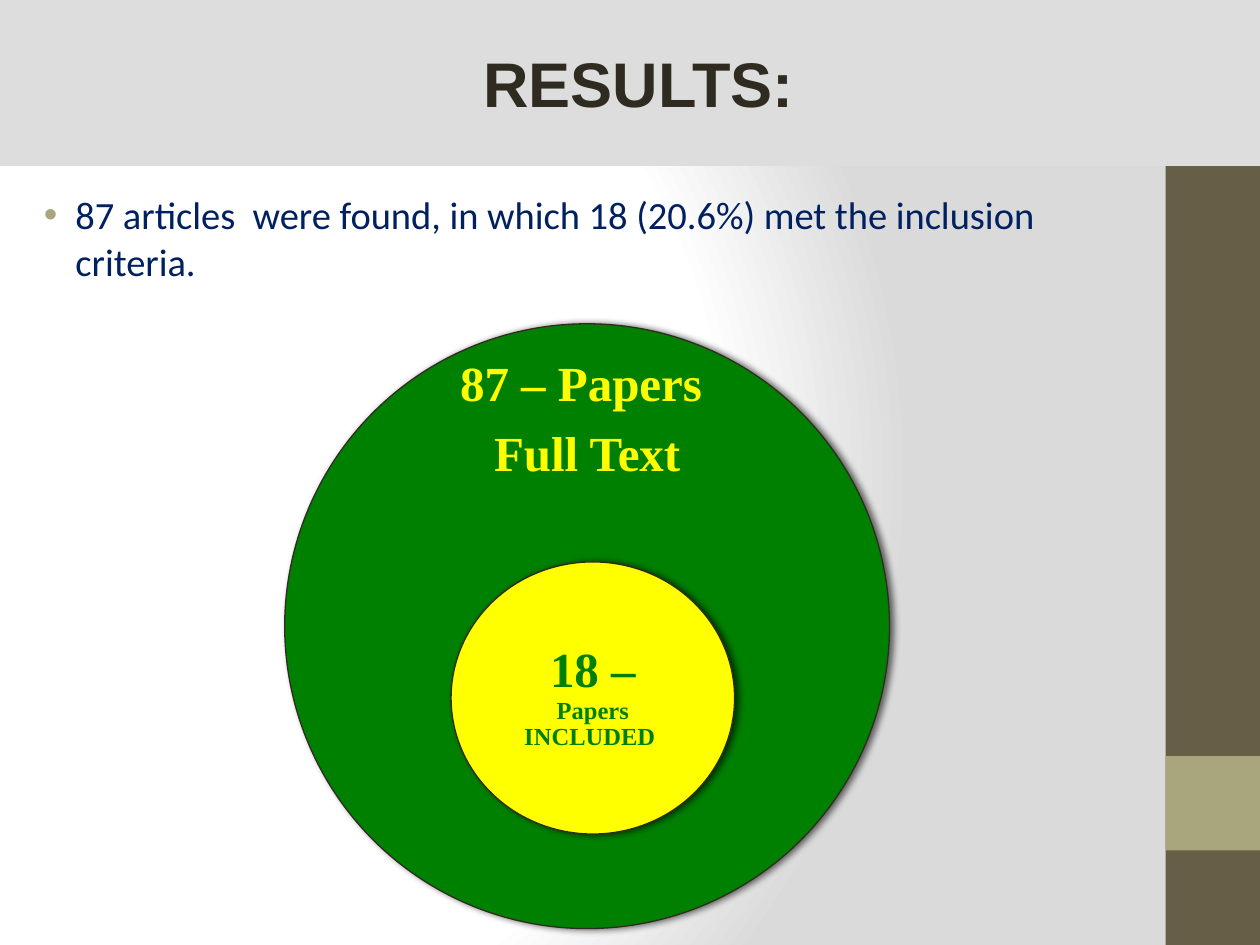
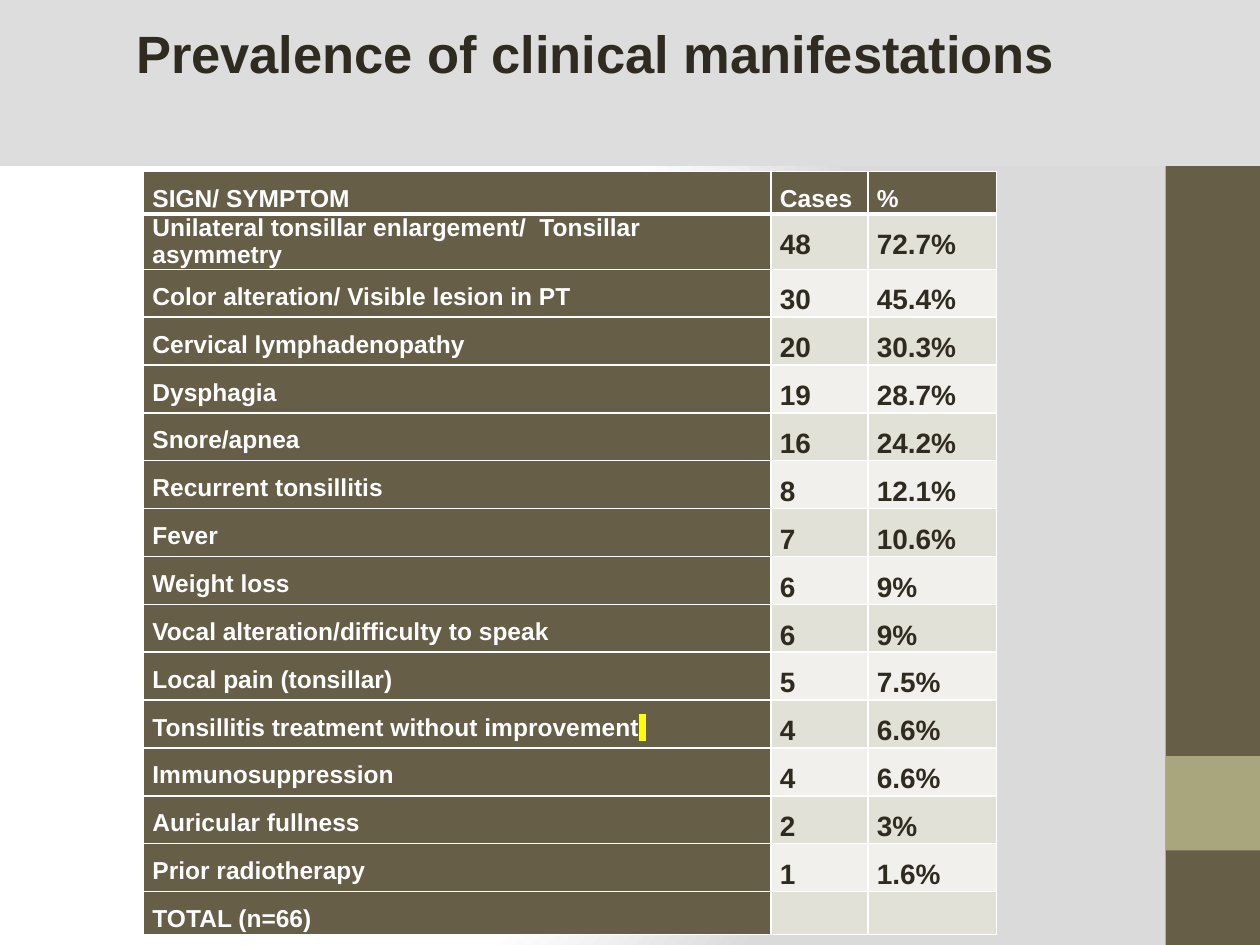
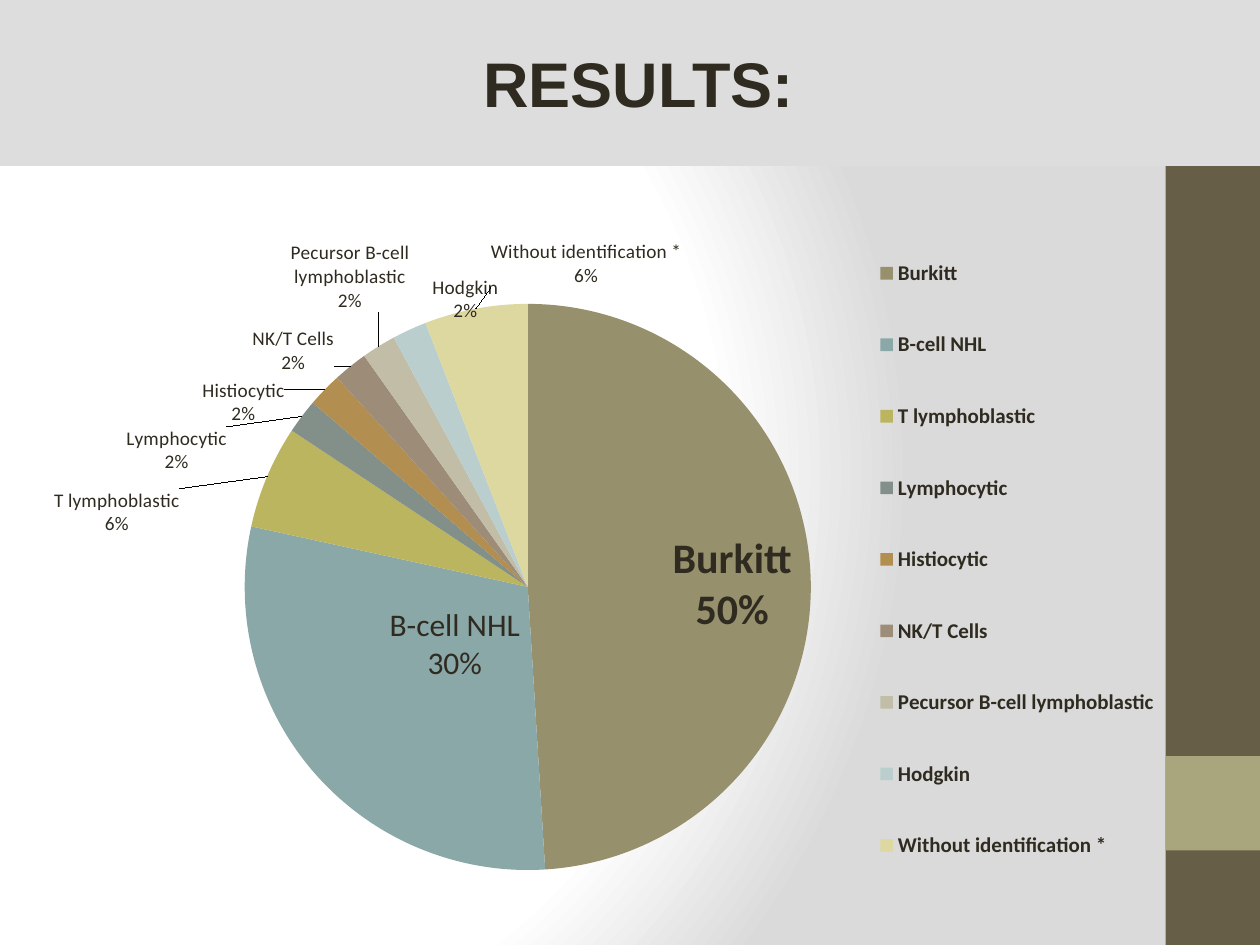
"""Builds three results slides: included papers, a symptom table and a diagnosis pie."""
import dataclasses
import typing

import pptx
import pptx.chart.data
import pptx.dml.color
import pptx.enum.chart
import pptx.enum.shapes
import pptx.enum.text
import pptx.oxml
import pptx.oxml.ns
import pptx.util

Inches = pptx.util.Inches
Pt = pptx.util.Pt
RGBColor = pptx.dml.color.RGBColor
qn = pptx.oxml.ns.qn
SHAPE = pptx.enum.shapes.MSO_SHAPE
ALIGN = pptx.enum.text.PP_ALIGN
ANCHOR = pptx.enum.text.MSO_ANCHOR
LABEL = pptx.enum.chart.XL_LABEL_POSITION

INK = RGBColor(0x2F, 0x2B, 0x20)
WHITE = RGBColor(0xFF, 0xFF, 0xFF)
BROWN = RGBColor(0x67, 0x5E, 0x47)
SAND = RGBColor(0xA9, 0xA5, 0x7C)
BAND = RGBColor(0xDD, 0xDD, 0xDD)
NAVY = RGBColor(0x00, 0x20, 0x60)
GREEN = RGBColor(0x00, 0x80, 0x00)
YELLOW = RGBColor(0xFF, 0xFF, 0x00)
ROW_DARK = RGBColor(0xE2, 0xE1, 0xD7)
ROW_LIGHT = RGBColor(0xF1, 0xF0, 0xEC)

Box = tuple[float, float, float, float]
BAND_BOX: Box = (0, 0, 10, 1.31)


@dataclasses.dataclass
class Block:
    """A filled preset shape."""
    box: Box
    fill: RGBColor
    line: typing.Optional[RGBColor] = None
    kind: typing.Any = SHAPE.RECTANGLE
    shadow: bool = False


@dataclasses.dataclass
class Run:
    """A piece of text with its size."""
    text: str
    size: float


@dataclasses.dataclass
class Caption:
    """Centred text over a circle, one list of runs per paragraph."""
    box: Box
    color: RGBColor
    paragraphs: list[list[Run]]


@dataclasses.dataclass
class Slice:
    """A pie slice with its label style and label offset."""
    name: str
    value: int
    color: str
    offset: tuple[float, float]
    size: float = 11
    bold: bool = False
    position: typing.Any = LABEL.OUTSIDE_END


FRAME = [
    Block((9.25, 0, 0.75, 7.5), BROWN),
    Block((9.25, 6, 0.75, 0.75), SAND),
    Block(BAND_BOX, BAND, BAND),
]
CIRCLES = [
    Block((2.26, 2.57, 4.8, 4.8), GREEN, INK, SHAPE.OVAL, True),
    Block((3.58, 4.46, 2.25, 2.16), YELLOW, INK, SHAPE.OVAL, True),
]
CAPTIONS = [
    Caption((3.4, 2.93, 2.52, 0.82), YELLOW,
            [[Run("87 – Papers ", 28)], [Run("Full Text", 28)]]),
    Caption((3.91, 5, 1.59, 1.08), GREEN,
            [[Run("18 – ", 28), Run("Papers INCLUDED ", 14)]]),
]
HIGHLIGHTED = "Tonsillitis treatment without improvement"
COLUMN_WIDTHS = (4.98, 0.77, 1.02)
SYMPTOMS = [
    ("SIGN/ SYMPTOM", "Cases", "%"),
    ("Unilateral tonsillar enlargement/  Tonsillar asymmetry", "48", "72.7%"),
    ("Color alteration/ Visible lesion in PT", "30", "45.4%"),
    ("Cervical lymphadenopathy", "20", "30.3%"),
    ("Dysphagia", "19", "28.7%"),
    ("Snore/apnea", "16", "24.2%"),
    ("Recurrent tonsillitis", "8", "12.1%"),
    ("Fever", "7", "10.6%"),
    ("Weight loss", "6", "9%"),
    ("Vocal alteration/difficulty to speak", "6", "9%"),
    ("Local pain (tonsillar)", "5", "7.5%"),
    (HIGHLIGHTED, "4", "6.6%"),
    ("Immunosuppression", "4", "6.6%"),
    ("Auricular fullness", "2", "3%"),
    ("Prior radiotherapy", "1", "1.6%"),
    ("TOTAL (n=66)", "", ""),
]
SLICES = [
    Slice("Burkitt", 50, "96906D", (-0.01, 0.01), 24, True, LABEL.INSIDE_END),
    Slice("B-cell NHL", 30, "8BA8A8", (0.03, -0.05), 18, False, LABEL.CENTER),
    Slice("T lymphoblastic", 6, "BCB560", (-0.07, 0.09)),
    Slice("Lymphocytic", 2, "829089", (-0.06, 0.09)),
    Slice("Histiocytic", 2, "B28E50", (-0.03, 0.06)),
    Slice("NK/T Cells", 2, "9C8C78", (-0.01, 0.02)),
    Slice("Pecursor B-cell lymphoblastic", 2, "C1BDA7", (0.03, -0.04)),
    Slice("Hodgkin", 2, "B9CECD", (0.08, 0)),
    Slice("Without identification *", 6, "DDD8A0", (0.18, -0.02)),
]
PERCENT = '0"%"'


def xml(text: str) -> typing.Any:
    """Parse an element whose tag carries the a: or c: prefix."""
    head, mark, tail = text.partition(">")
    slash = "/" if head.endswith("/") else ""
    return pptx.oxml.parse_xml(
        f"{head.rstrip('/')} {pptx.oxml.ns.nsdecls('a', 'c')}{slash}{mark}{tail}")


def inches(box: Box) -> list[int]:
    """Turn a box into lengths."""
    return [Inches(v) for v in box]


def style(r: typing.Any, font: str, size: float, color: RGBColor, bold: bool = True) -> None:
    """Format the font of a run, label or legend."""
    r.font.name = font
    r.font.size = Pt(size)
    r.font.bold = bold
    r.font.color.rgb = color


def set_background(master: typing.Any) -> None:
    """Give every slide the radial gradient."""
    master.background.fill.gradient()
    old = master._element.find(".//" + qn("a:gradFill"))
    stops = "".join(
        f'<a:gs pos="{pos}"><a:srgbClr val="{color}"/></a:gs>'
        for pos, color in ((0, WHITE), (75000, WHITE), (100000, "DADADA")))
    new = xml(f'<a:gradFill rotWithShape="1"><a:gsLst>{stops}</a:gsLst><a:path path="circle">'
              '<a:fillToRect l="20000" t="50000" r="100000" b="50000"/></a:path></a:gradFill>')
    old.getparent().replace(old, new)


def add_block(s: typing.Any, block: Block) -> None:
    """Draw a filled shape."""
    sp = s.shapes.add_shape(block.kind, *inches(block.box))
    sp.shadow.inherit = False
    sp.fill.solid()
    sp.fill.fore_color.rgb = block.fill
    if block.line is None:
        sp.line.fill.background()
    else:
        sp.line.color.rgb = block.line
        sp.line.width = Pt(0.75)
    if block.shadow:
        effects = sp._element.spPr.find(qn("a:effectLst"))
        effects.append(xml(
            f'<a:outerShdw blurRad="{Pt(4)}" dist="{Pt(2)}" dir="0">'
            '<a:srgbClr val="000000"><a:alpha val="60000"/></a:srgbClr></a:outerShdw>'))


def add_slide(prs: typing.Any, title: str, size: float = 36, box: Box = BAND_BOX,
              align: typing.Any = ALIGN.CENTER, anchor: typing.Any = ANCHOR.MIDDLE) -> typing.Any:
    """Add a slide with side bars, title band and title."""
    s = prs.slides.add_slide(prs.slide_layouts[5])
    for block in FRAME:
        add_block(s, block)
    sp = s.shapes.title
    s.shapes._spTree.append(sp._element)
    sp.left, sp.top, sp.width, sp.height = inches(box)
    tf = sp.text_frame
    tf.text = title
    tf.word_wrap = True
    tf.auto_size = pptx.enum.text.MSO_AUTO_SIZE.NONE
    tf.vertical_anchor = anchor
    tf.paragraphs[0].alignment = align
    style(tf.paragraphs[0].runs[0], "Arial", size, INK)
    return s


def add_bullet(s: typing.Any, text: str) -> None:
    """Add the bulleted finding."""
    tf = s.shapes.add_textbox(*inches((0.12, 1.47, 9.09, 5.76))).text_frame
    tf.word_wrap = True
    p = tf.paragraphs[0]
    p.text = text
    pPr = p._p.get_or_add_pPr()
    pPr.set("marL", str(Inches(0.38)))
    pPr.set("indent", str(Inches(-0.25)))
    pPr.append(xml(f'<a:buClr><a:srgbClr val="{SAND}"/></a:buClr>'))
    pPr.append(xml('<a:buFont typeface="Arial"/>'))
    pPr.append(xml('<a:buChar char="•"/>'))
    style(p.runs[0], "Calibri", 22, NAVY, False)


def add_caption(s: typing.Any, caption: Caption) -> None:
    """Write the text of a circle."""
    tf = s.shapes.add_textbox(*inches(caption.box)).text_frame
    tf.word_wrap = True
    tf.vertical_anchor = ANCHOR.MIDDLE
    tf.margin_left = tf.margin_right = tf.margin_top = tf.margin_bottom = Inches(0.22)
    for i, runs in enumerate(caption.paragraphs):
        p = tf.add_paragraph() if i else tf.paragraphs[0]
        p.alignment = ALIGN.CENTER
        p.line_spacing = 0.9
        p.space_after = Pt(10)
        for run in runs:
            r = p.add_run()
            r.text = run.text
            style(r, "Times New Roman", run.size, caption.color)


def set_borders(cell: typing.Any, row: int) -> None:
    """Draw white cell borders, thick under the header."""
    widths = {"L": 1, "R": 1, "T": 3 if row == 1 else 1, "B": 3 if row == 0 else 1}
    for i, (side, width) in enumerate(widths.items()):
        cell._tc.get_or_add_tcPr().insert(i, xml(
            f'<a:ln{side} w="{Pt(width)}"><a:solidFill><a:srgbClr val="{WHITE}"/>'
            f'</a:solidFill></a:ln{side}>'))


def fill_cell(cell: typing.Any, text: str, row: int, col: int) -> None:
    """Write and format one table cell."""
    heading = row == 0 or col == 0
    cell.margin_left = cell.margin_right = Inches(0.07)
    cell.margin_top = cell.margin_bottom = 0
    cell.fill.solid()
    cell.fill.fore_color.rgb = BROWN if heading else ROW_DARK if row % 2 else ROW_LIGHT
    set_borders(cell, row)
    if not text:
        return
    p = cell.text_frame.paragraphs[0]
    p.text = text
    if (row, col) != (1, 0):
        p.alignment = ALIGN.JUSTIFY
        p.line_spacing = 1.5
        p.space_after = Pt(6)
    if text == HIGHLIGHTED:
        p.add_run().text = " "
    for r in p.runs:
        style(r, "Arial", 14 if heading else 16, WHITE if heading else INK)
    if text == HIGHLIGHTED:
        color = p.runs[-1]._r.rPr.find(qn("a:solidFill"))
        color.addnext(xml(f'<a:highlight><a:srgbClr val="{YELLOW}"/></a:highlight>'))


def add_symptom_table(s: typing.Any) -> None:
    """Add the table of signs and symptoms."""
    table = s.shapes.add_table(len(SYMPTOMS), len(COLUMN_WIDTHS),
                               *inches((1.14, 1.36, 6.77, 6))).table
    for column, width in zip(table.columns, COLUMN_WIDTHS):
        column.width = Inches(width)
    for row, texts in enumerate(SYMPTOMS):
        table.rows[row].height = Inches(0.34 if row in (0, len(SYMPTOMS) - 1) else 0.38)
        for col, text in enumerate(texts):
            fill_cell(table.cell(row, col), text, row, col)


def set_layout(parent: typing.Any, index: int, **values: typing.Any) -> None:
    """Place a chart part by hand."""
    for old in parent.findall(qn("c:layout")):
        parent.remove(old)
    items = "".join(f'<c:{key} val="{value}"/>' for key, value in values.items())
    parent.insert(index, xml(
        f"<c:layout><c:manualLayout>{items}</c:manualLayout></c:layout>"))


def format_slice(point: typing.Any, part: Slice) -> None:
    """Colour a slice and set its label."""
    point.format.fill.solid()
    point.format.fill.fore_color.rgb = RGBColor.from_string(part.color)
    label = point.data_label
    style(label, "Calibri", part.size, INK, part.bold)
    label.position = part.position
    dLbl = label._dLbl
    for tag, value in (("c:showVal", "1"), ("c:showCatName", "1"), ("c:showPercent", "0")):
        dLbl.find(qn(tag)).set("val", value)
    dLbl.insert(1, xml(f"<c:numFmt formatCode='{PERCENT}' sourceLinked='0'/>"))
    dLbl.append(xml("<c:separator>\n</c:separator>"))
    set_layout(dLbl, 1, x=part.offset[0], y=part.offset[1])


def add_diagnosis_pie(s: typing.Any) -> None:
    """Add the pie of diagnoses with its legend."""
    data = pptx.chart.data.CategoryChartData()
    data.categories = [part.name for part in SLICES]
    data.add_series("Series 1", [part.value for part in SLICES])
    chart = s.shapes.add_chart(pptx.enum.chart.XL_CHART_TYPE.PIE,
                               *inches((0.35, 1.7, 9.14, 5.48)), data).chart
    chart.has_title = False
    style(chart, "Calibri", 10, INK, False)
    chart.has_legend = True
    legend = chart.legend
    legend.position = pptx.enum.chart.XL_LEGEND_POSITION.RIGHT
    legend.include_in_layout = False
    style(legend, "Calibri", 12, INK)
    set_layout(legend._element, 1, xMode="edge", yMode="edge", x=0.71, y=0, w=0.27, h=1)
    plot = chart.plots[0]
    plot.vary_by_categories = True
    set_layout(plot._element.getparent(), 0, layoutTarget="inner", xMode="edge", yMode="edge",
               x=0.17, y=0.13, w=0.5, h=0.82)
    series = plot.series[0]
    labels = series.data_labels
    labels.show_value = True
    labels.show_category_name = True
    labels.number_format = PERCENT
    labels.number_format_is_linked = False
    labels.font.size = Pt(11)
    for i, part in enumerate(SLICES):
        format_slice(series.points[i], part)


def main() -> None:
    """Build and save the presentation."""
    prs = pptx.Presentation()
    prs.slide_width, prs.slide_height = Inches(10), Inches(7.5)
    set_background(prs.slide_master)

    s = add_slide(prs, " RESULTS:")
    add_bullet(s, "87 articles  were found, in which 18 (20.6%) met the inclusion criteria.")
    for circle, caption in zip(CIRCLES, CAPTIONS):
        add_block(s, circle)
        add_caption(s, caption)

    s = add_slide(prs, "Prevalence of clinical manifestations", 30, (0.98, 0.12, 8.58, 0.61),
                  ALIGN.LEFT, ANCHOR.TOP)
    add_symptom_table(s)

    s = add_slide(prs, " RESULTS:")
    add_diagnosis_pie(s)
    prs.save("out.pptx")


if __name__ == "__main__":
    main()
